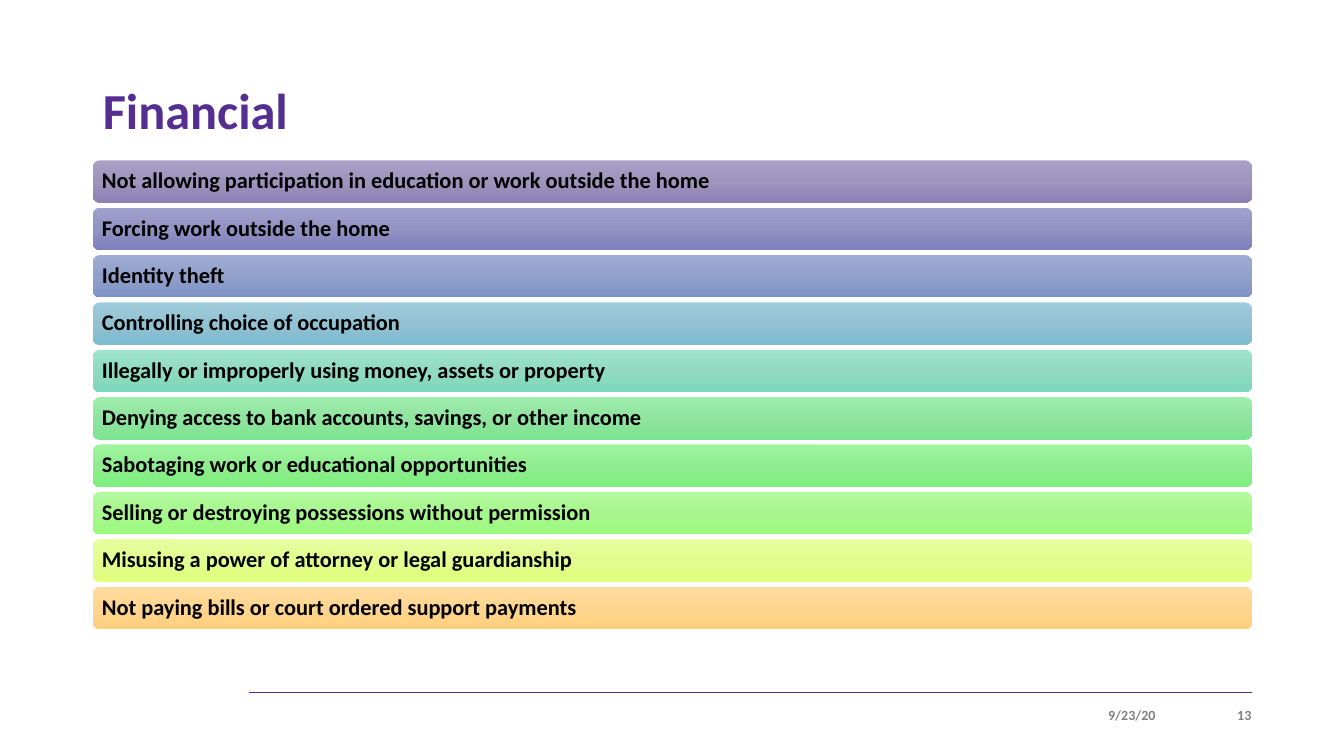
from copy import deepcopy
from dataclasses import dataclass

from lxml import etree
from pptx import Presentation
from pptx.dml.color import RGBColor as RGB
from pptx.enum.shapes import MSO_CONNECTOR as Connector, MSO_SHAPE as Preset
from pptx.enum.text import MSO_ANCHOR as Anchor, PP_ALIGN as Align
from pptx.oxml.ns import qn
from pptx.util import Emu, Pt

PX = 9144  # EMU per px, 100 px to the inch


@dataclass(frozen=True)
class Theme:
    font: str = "Calibri"
    accent: str = "542E91"
    ink: str = "000000"
    muted: str = "808080"
    title_size: int = 36
    bar_size: int = 16
    footer_size: int = 10
    rule_width: float = 0.5


THEME = Theme()

# Left edge and width shared by the title and the bars
LEFT, WIDTH = 92, 1150
BARS_TOP, BAR_HEIGHT, BAR_PITCH = 159, 42, 47

# Wording of each bar with its top, middle and bottom gradient colours
TACTICS = [
    ("Not allowing participation in education or work outside the home",
     ("AAA0C7", "9E94BC", "8E80B5")),
    ("Forcing work outside the home", ("A0A0CE", "9393C3", "7F7FBD")),
    ("Identity theft", ("9FADD5", "92A1CA", "7E92C6")),
    ("Controlling choice of occupation", ("9FCCDC", "92C1D2", "7DBBCF")),
    ("Illegally or improperly using money, assets or property",
     ("9EE4CC", "91DAC1", "7DD9BB")),
    ("Denying access to bank accounts, savings, or other income",
     ("9EEDAC", "91E3A0", "7CE490")),
    ("Sabotaging work or educational opportunities",
     ("9EF59E", "91EC91", "7CEF7C")),
    ("Selling or destroying possessions without permission",
     ("B3FA9E", "A8F690", "9AFB7C")),
    ("Misusing a power of attorney or legal guardianship",
     ("E7FF9E", "E2FD90", "E0FF7C")),
    ("Not paying bills or court ordered support payments",
     ("FFDB9E", "FFD590", "FFD07C")),
]


def px(*lengths):
    return [Emu(length * PX) for length in lengths]


def write(shape, text, *, size, color, align=Align.LEFT, margins=(10, 5),
          line_spacing=None):
    """Put one bold, vertically centred paragraph into a shape."""
    frame = shape.text_frame
    frame.word_wrap = True
    frame.vertical_anchor = Anchor.MIDDLE
    frame.margin_left, frame.margin_top = px(*margins)
    frame.margin_right, frame.margin_bottom = px(*margins)
    paragraph = frame.paragraphs[0]
    paragraph.alignment = align
    paragraph.line_spacing = line_spacing
    run = paragraph.add_run()
    run.text = text
    run.font.name = THEME.font
    run.font.size = Pt(size)
    run.font.bold = True
    run.font.color.rgb = RGB.from_string(color)


def add_title(slide, text):
    title = slide.shapes.title
    title.left, title.top, title.width, title.height = px(LEFT, 40, WIDTH, 145)
    write(title, text, size=THEME.title_size, color=THEME.accent,
          line_spacing=0.9)


def fill_downwards(shape, colors):
    """Fill a shape with an evenly spaced gradient from top to bottom."""
    fill = shape.fill
    fill.gradient()
    fill.gradient_angle = 270
    stop_list = shape.element.spPr.find(".//" + qn("a:gsLst"))
    stop_list.insert(1, deepcopy(stop_list[0]))
    for index, (stop, color) in enumerate(zip(fill.gradient_stops, colors)):
        stop.position = index / (len(colors) - 1)
        stop.color.rgb = RGB.from_string(color)


def add_bar(slide, top, text, colors):
    bar = slide.shapes.add_shape(Preset.ROUNDED_RECTANGLE,
                                 *px(LEFT, top, WIDTH, BAR_HEIGHT))
    bar.shadow.inherit = False
    bar.line.fill.background()
    fill_downwards(bar, colors)
    write(bar, text, size=THEME.bar_size, color=THEME.ink, margins=(7, 7),
          line_spacing=0.9)


def add_rule(slide, start, end, y):
    rule = slide.shapes.add_connector(Connector.STRAIGHT,
                                      *px(start, y, end, y))
    rule.line.color.rgb = RGB.from_string(THEME.accent)
    rule.line.width = Pt(THEME.rule_width)
    etree.SubElement(rule.element.spPr, qn("a:effectLst"))


def add_footer(slide, left, width, text):
    footer = slide.shapes.add_textbox(*px(left, 695, width, 28))
    write(footer, text, size=THEME.footer_size, color=THEME.muted,
          align=Align.RIGHT, margins=(0, 5))


def main():
    deck = Presentation()
    deck.slide_width, deck.slide_height = px(1333, 750)
    slide = deck.slides.add_slide(deck.slide_layouts[5])  # title only

    # Heading
    add_title(slide, "Financial")

    # Bars
    for row, (text, colors) in enumerate(TACTICS):
        add_bar(slide, BARS_TOP + row * BAR_PITCH, text, colors)

    # Footer rule, date and page number
    add_rule(slide, 247, LEFT + WIDTH, 687)
    add_footer(slide, 846, 300, "9/23/20")
    add_footer(slide, 1162, 79, "13")

    deck.save("out.pptx")


if __name__ == "__main__":
    main()
